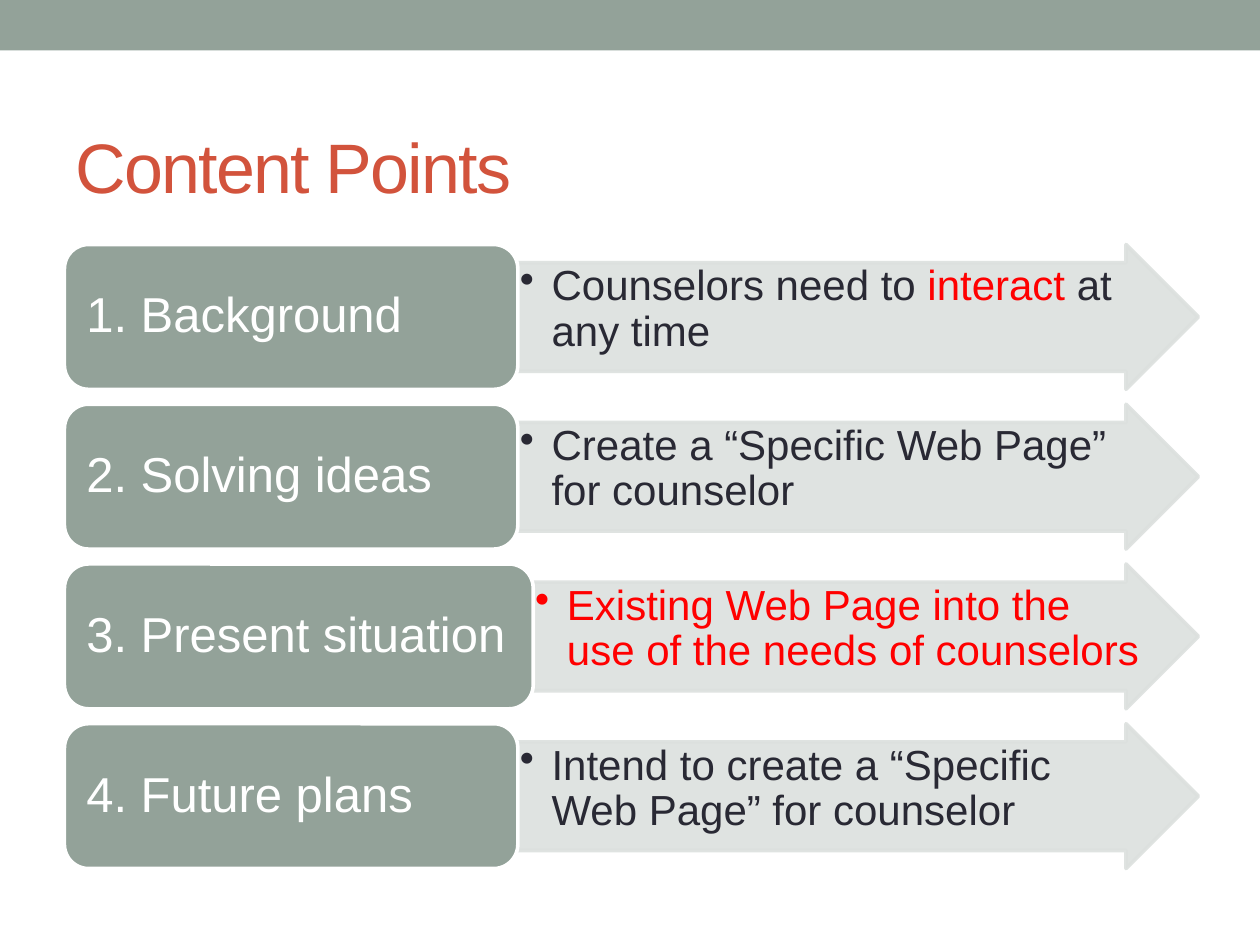
"""Builds the Content Points slide: four numbered labels with arrows."""
from lxml import etree
from pptx import Presentation
from pptx import util as u
from pptx.dml.color import RGBColor
from pptx.enum import shapes, text
from pptx.oxml.ns import qn

SAGE, PALE, WHITE = "93A299", "DCE0DE", "FFFFFF"
INK, RED, TITLE = "292934", "FF0000", "D2533C"
NARROW, WIDE = 9.14, 9.45
POINTS = [
    ("1. Background", NARROW,
     [("Counselors need to ", INK), ("interact", RED), (" at any time", INK)]),
    ("2. Solving ideas", NARROW,
     [("Create a “Specific Web Page” for counselor", INK)]),
    ("3. Present situation", WIDE,
     [("Existing Web Page into the use of the needs of counselors", RED)]),
    ("4. Future plans", NARROW,
     [("Intend to create a “Specific Web Page” for counselor", INK)]),
]
LEFT, RIGHT, TOP, PITCH, HEIGHT = 1.3, 24.16, 4.93, 3.22, 2.92


def paint(color_format, value):
    color_format.rgb = RGBColor.from_string(value)


def add_block(slide, kind, box, fill, line=None):
    block = slide.shapes.add_shape(kind, *map(u.Cm, box))
    block.shadow.inherit = False
    block.fill.solid()
    paint(block.fill.fore_color, fill)
    if line:
        block.line.width = u.Pt(2.08)
        paint(block.line.color, line)
    else:
        block.line.fill.background()
    return block


def write(frame, runs, size, anchor, margins, spacing=None):
    frame.word_wrap = True
    frame.vertical_anchor = anchor
    frame.margin_left = frame.margin_right = u.Cm(margins[0])
    frame.margin_top = frame.margin_bottom = u.Cm(margins[1])
    paragraph = frame.paragraphs[0]
    paragraph.alignment = text.PP_ALIGN.LEFT
    paragraph.line_spacing = spacing
    for words, color in runs:
        run = paragraph.add_run()
        run.text = words
        run.font.name = "Arial"
        run.font.size = u.Pt(size)
        paint(run.font.color, color)
    return paragraph


def add_bullet(paragraph):
    properties = paragraph._p.get_or_add_pPr()
    properties.set("marL", str(u.Cm(0.64)))
    properties.set("indent", str(-u.Cm(0.64)))
    etree.SubElement(properties, qn("a:buChar")).set("char", "•")


def soften(block):
    for color in block._element.spPr.iter(qn("a:srgbClr")):
        etree.SubElement(color, qn("a:alpha")).set("val", "90000")


def add_point(slide, top, label, label_width, runs):
    start = LEFT + label_width
    arrow = add_block(slide, shapes.MSO_SHAPE.RIGHT_ARROW,
                      (start, top, RIGHT - start, HEIGHT), PALE, PALE)
    arrow.adjustments[0], arrow.adjustments[1] = 0.75, 0.5
    soften(arrow)
    add_bullet(write(arrow.text_frame, runs, 24, text.MSO_ANCHOR.TOP,
                     (0.04, 0.04), 0.9))
    tab = add_block(slide, shapes.MSO_SHAPE.ROUNDED_RECTANGLE,
                    (LEFT, top, label_width, HEIGHT), SAGE, WHITE)
    write(tab.text_frame, [(label, WHITE)], 28, text.MSO_ANCHOR.MIDDLE,
          (0.3, 0.15), 0.9)


def main():
    deck = Presentation()
    deck.slide_width, deck.slide_height = u.Cm(25.4), u.Cm(19.05)
    slide = deck.slides.add_slide(deck.slide_layouts[5])
    add_block(slide, shapes.MSO_SHAPE.RECTANGLE, (0, 0, 25.4, 1.02), SAGE)

    title = slide.shapes.title
    title.left, title.top = u.Cm(1.27), u.Cm(1.75)
    title.width, title.height = u.Cm(22.86), u.Cm(3.18)
    heading = write(title.text_frame, [("Content Points", TITLE)], 40,
                    text.MSO_ANCHOR.MIDDLE, (0.25, 0.13))
    heading.runs[0].font._element.set("spc", "-100")

    for row, point in enumerate(POINTS):
        add_point(slide, TOP + row * PITCH, *point)
    deck.save("out.pptx")


if __name__ == "__main__":
    main()
